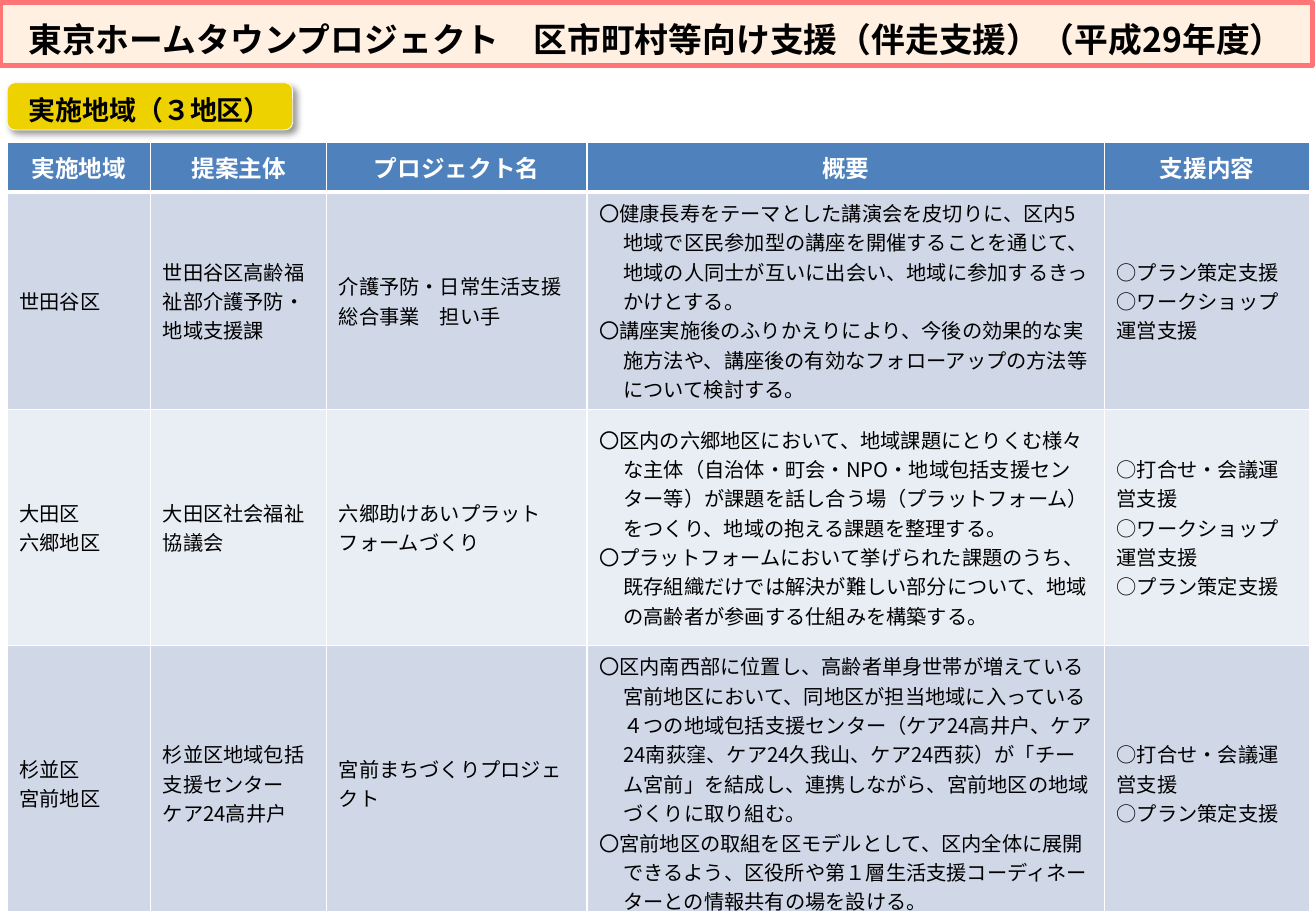
from dataclasses import dataclass

from lxml import etree
from pptx import Presentation
from pptx.dml.color import RGBColor
from pptx.enum import shapes, text
from pptx.oxml import ns
from pptx.util import Cm, Pt

FONT = "Noto Sans CJK JP"
BLACK = RGBColor(0x00, 0x00, 0x00)
WHITE = RGBColor(0xFF, 0xFF, 0xFF)
CREAM = RGBColor(0xFF, 0xF0, 0xE1)
CORAL = RGBColor(0xFF, 0x75, 0x75)
GOLD = RGBColor(0xEE, 0xD2, 0x00)
OFF_WHITE = RGBColor(0xFB, 0xFA, 0xF8)
HEADER_BLUE = RGBColor(0x4F, 0x81, 0xBD)
BANDS = (RGBColor(0xD0, 0xD8, 0xE8), RGBColor(0xE9, 0xED, 0xF4))

HEADERS = ("実施地域", "提案主体", "プロジェクト名", "概要", "支援内容")
COLUMN_WIDTHS = (3.0, 3.68, 5.44, 10.82, 4.29)
ROW_HEIGHTS = (1.04, 4.14, 4.93, 5.0)
SUMMARY_COLUMN = HEADERS.index("概要")
HANGING = Cm(0.51)


@dataclass
class District:
    area: str
    proposer: str
    project: str
    summary: str
    support: str

    def cells(self) -> tuple[str, ...]:
        return self.area, self.proposer, self.project, self.summary, self.support


DISTRICTS = (
    District(
        "世田谷区",
        "世田谷区高齢福祉部介護予防・地域支援課",
        "介護予防・日常生活支援総合事業　担い手",
        "〇健康長寿をテーマとした講演会を皮切りに、区内5地域で区民参加型の講座を開催することを通じて、"
        "地域の人同士が互いに出会い、地域に参加するきっかけとする。\n"
        "〇講座実施後のふりかえりにより、今後の効果的な実施方法や、"
        "講座後の有効なフォローアップの方法等について検討する。",
        "○プラン策定支援\n○ワークショップ運営支援",
    ),
    District(
        "大田区\n六郷地区",
        "大田区社会福祉協議会",
        "六郷助けあいプラットフォームづくり",
        "〇区内の六郷地区において、地域課題にとりくむ様々な主体（自治体・町会・NPO・地域包括支援センター等）が"
        "課題を話し合う場（プラットフォーム）をつくり、地域の抱える課題を整理する。\n"
        "〇プラットフォームにおいて挙げられた課題のうち、既存組織だけでは解決が難しい部分について、"
        "地域の高齢者が参画する仕組みを構築する。",
        "○打合せ・会議運営支援\n○ワークショップ運営支援\n○プラン策定支援",
    ),
    District(
        "杉並区\n宮前地区",
        "杉並区地域包括支援センター\nケア24高井戸",
        "宮前まちづくりプロジェクト",
        "〇区内南西部に位置し、高齢者単身世帯が増えている宮前地区において、同地区が担当地域に入っている"
        "４つの地域包括支援センター（ケア24高井戸、ケア24南荻窪、ケア24久我山、ケア24西荻）が"
        "「チーム宮前」を結成し、連携しながら、宮前地区の地域づくりに取り組む。\n"
        "〇宮前地区の取組を区モデルとして、区内全体に展開できるよう、"
        "区役所や第１層生活支援コーディネーターとの情報共有の場を設ける。",
        "○打合せ・会議運営支援\n○プラン策定支援",
    ),
)


def write(tf, content: str, size: float, color: RGBColor = BLACK,
          bold: bool = False, align=text.PP_ALIGN.LEFT) -> None:
    tf.text = content
    for p in tf.paragraphs:
        p.alignment = align
        for r in p.runs:
            r.font.name, r.font.size, r.font.bold = FONT, Pt(size), bold
            r.font.color.rgb = color
            ea = etree.SubElement(r._r.get_or_add_rPr(), ns.qn("a:ea"))
            ea.set("typeface", FONT)


def style_box(sp, content: str, size: float, fill: RGBColor, line: RGBColor,
              line_width: float, top_inset: float, wrap: bool) -> None:
    sp.fill.solid()
    sp.fill.fore_color.rgb = fill
    sp.line.color.rgb = line
    sp.line.width = Pt(line_width)
    tf = sp.text_frame
    tf.auto_size = text.MSO_AUTO_SIZE.NONE
    tf.word_wrap = wrap
    tf.vertical_anchor = text.MSO_ANCHOR.MIDDLE
    tf.margin_left = tf.margin_right = Cm(0.25)
    tf.margin_top, tf.margin_bottom = Cm(top_inset), 0
    write(tf, content, size, bold=True, align=text.PP_ALIGN.CENTER)


def add_title(s) -> None:
    sp = s.shapes.title
    sp.left, sp.top, sp.width, sp.height = Cm(0), Cm(0.05), Cm(27.43), Cm(1.32)
    style_box(sp, "東京ホームタウンプロジェクト　区市町村等向け支援（伴走支援）（平成29年度）",
              20, CREAM, CORAL, 3, 0.2, True)


def add_section_label(s) -> None:
    sp = s.shapes.add_shape(shapes.MSO_SHAPE.ROUNDED_RECTANGLE,
                            Cm(0.15), Cm(1.73), Cm(5.97), Cm(0.99))
    style_box(sp, "実施地域（３地区）", 16, GOLD, OFF_WHITE, 0.5, 0.13, False)
    sp.shadow.inherit = False
    effects = sp._element.spPr.find(ns.qn("a:effectLst"))
    shadow = etree.SubElement(effects, ns.qn("a:outerShdw"), blurRad=str(Pt(4)),
                              dist=str(Pt(3)), dir=str(45 * 60000), rotWithShape="0")
    color = etree.SubElement(shadow, ns.qn("a:srgbClr"), val=str(BLACK))
    etree.SubElement(color, ns.qn("a:alpha"), val="40000")


def set_borders(cell, bottom: float, top: float) -> None:
    tc_pr = cell._tc.get_or_add_tcPr()
    widths = {"a:lnL": 1, "a:lnR": 1, "a:lnT": top, "a:lnB": bottom}
    for i, (tag, width) in enumerate(widths.items()):
        ln = etree.Element(ns.qn(tag), w=str(Pt(width)))
        fill = etree.SubElement(ln, ns.qn("a:solidFill"))
        etree.SubElement(fill, ns.qn("a:srgbClr"), val=str(WHITE))
        tc_pr.insert(i, ln)


def add_district_table(s) -> None:
    rows = [HEADERS, *(d.cells() for d in DISTRICTS)]
    table = s.shapes.add_table(len(rows), len(HEADERS), Cm(0.15), Cm(2.97),
                               Cm(sum(COLUMN_WIDTHS)), Cm(sum(ROW_HEIGHTS))).table
    for column, width in zip(table.columns, COLUMN_WIDTHS):
        column.width = Cm(width)
    for row, height in zip(table.rows, ROW_HEIGHTS):
        row.height = Cm(height)
    for i, contents in enumerate(rows):
        for j, content in enumerate(contents):
            cell = table.cell(i, j)
            cell.vertical_anchor = text.MSO_ANCHOR.MIDDLE
            cell.fill.solid()
            cell.fill.fore_color.rgb = BANDS[(i - 1) % 2] if i else HEADER_BLUE
            set_borders(cell, bottom=1 if i else 3, top=3 if i == 1 else 1)
            if i == 0:
                write(cell.text_frame, content, 14, WHITE, True, text.PP_ALIGN.CENTER)
                continue
            write(cell.text_frame, content, 12)
            if j == SUMMARY_COLUMN:
                for p in cell.text_frame.paragraphs:
                    p_pr = p._p.get_or_add_pPr()
                    p_pr.set("marL", str(HANGING))
                    p_pr.set("indent", str(-HANGING))


def main() -> None:
    prs = Presentation()
    prs.slide_width, prs.slide_height = Cm(27.51), Cm(19.05)
    s = prs.slides.add_slide(prs.slide_layouts[5])
    add_title(s)
    add_section_label(s)
    add_district_table(s)
    prs.save("out.pptx")


if __name__ == "__main__":
    main()
